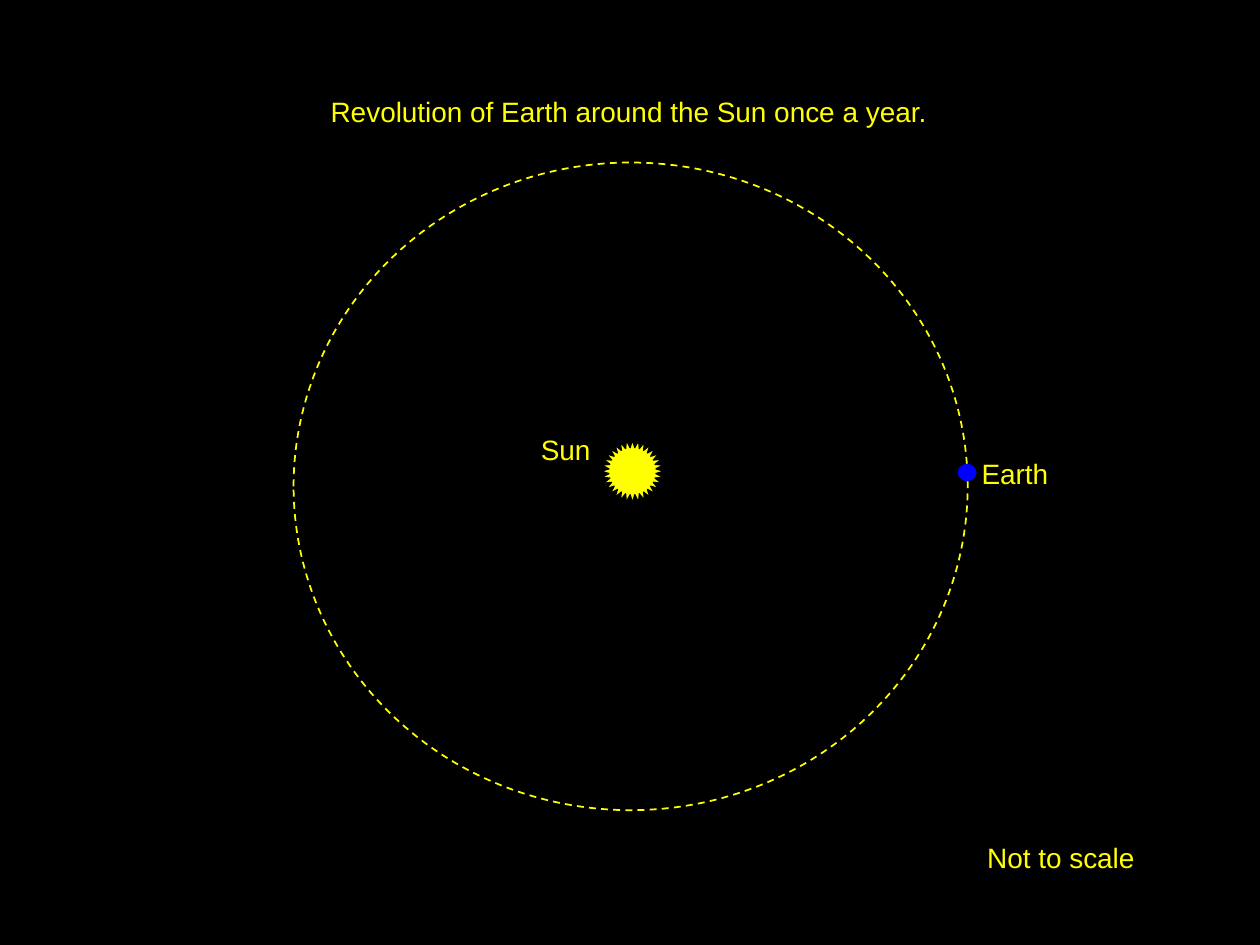
import pptx
import pptx.dml.color
import pptx.enum.dml
import pptx.enum.shapes
import pptx.enum.text
import pptx.util
from dataclasses import dataclass

SHAPE = pptx.enum.shapes.MSO_SHAPE
ANCHOR = pptx.enum.text.MSO_ANCHOR


@dataclass(frozen=True)
class Theme:
    space: str = "000000"
    sun: str = "FFFF00"
    earth: str = "0000FF"
    font: str = "Arial"
    size: float = 16
    outline: float = 0.75
    orbit: float = 1


class Diagram:
    """Places elements by left, top, width and height in percent of the slide."""

    def __init__(self, prs, theme):
        self.prs, self.theme = prs, theme
        self.slide = prs.slides.add_slide(prs.slide_layouts[5])
        fill = self.slide.background.fill
        fill.solid()
        fill.fore_color.rgb = self.rgb(theme.space)

    def rgb(self, value):
        return pptx.dml.color.RGBColor.from_string(value)

    def box(self, x, y, w, h):
        width, height = self.prs.slide_width, self.prs.slide_height
        return [round(share * side / 100) for share, side in
                ((x, width), (y, height), (w, width), (h, height))]

    def style_text(self, sp, text, anchor, wrap):
        tf = sp.text_frame
        tf.text = text
        tf.word_wrap = wrap
        tf.vertical_anchor = anchor
        tf.auto_size = pptx.enum.text.MSO_AUTO_SIZE.SHAPE_TO_FIT_TEXT
        p = tf.paragraphs[0]
        p.alignment = pptx.enum.text.PP_ALIGN.CENTER
        p.line_spacing = 1.0
        p.space_before = pptx.util.Pt(0)
        font = p.runs[0].font
        font.name = self.theme.font
        font.size = pptx.util.Pt(self.theme.size)
        font.color.rgb = self.rgb(self.theme.sun)

    def title(self, text, *place):
        sp = self.slide.shapes.title
        sp.left, sp.top, sp.width, sp.height = self.box(*place)
        self.style_text(sp, text, ANCHOR.MIDDLE, True)

    def label(self, text, *place, anchor=ANCHOR.TOP, wrap=False):
        sp = self.slide.shapes.add_textbox(*self.box(*place))
        self.style_text(sp, text, anchor, wrap)

    def body(self, kind, *place, fill=None, line=None, weight=1, dash=None):
        sp = self.slide.shapes.add_shape(kind, *self.box(*place))
        sp.shadow.inherit = False
        if fill:
            sp.fill.solid()
            sp.fill.fore_color.rgb = self.rgb(fill)
        else:
            sp.fill.background()
        if line:
            sp.line.color.rgb = self.rgb(line)
            sp.line.width = pptx.util.Pt(weight)
            if dash:
                sp.line.dash_style = dash
        else:
            sp.line.fill.background()


def main():
    prs = pptx.Presentation()
    prs.slide_width = pptx.util.Inches(10)
    prs.slide_height = pptx.util.Inches(7.5)
    theme = Theme()
    d = Diagram(prs, theme)

    # Heading
    d.title("Revolution of Earth around the Sun once a year.", 6.2, 9.33, 87.4, 4.93)

    # Sun, orbit and Earth
    d.body(SHAPE.STAR_32_POINT, 47.7, 46.53, 5, 6.67,
           fill=theme.sun, line=theme.space, weight=theme.outline)
    d.body(SHAPE.OVAL, 23.3, 17.2, 53.5, 68.53, line=theme.sun,
           weight=theme.orbit, dash=pptx.enum.dml.MSO_LINE.DASH)
    d.body(SHAPE.OVAL, 76, 49.07, 1.5, 1.87, fill=theme.earth)

    # Labels
    d.label("Earth", 76.9, 47.6, 7.3, 4.93)
    d.label("Sun", 41.9, 45.07, 6, 4.93)
    d.label("Not to scale", 75.4, 88.27, 17.6, 4.93, anchor=ANCHOR.MIDDLE, wrap=True)

    prs.save("out.pptx")


if __name__ == "__main__":
    main()
